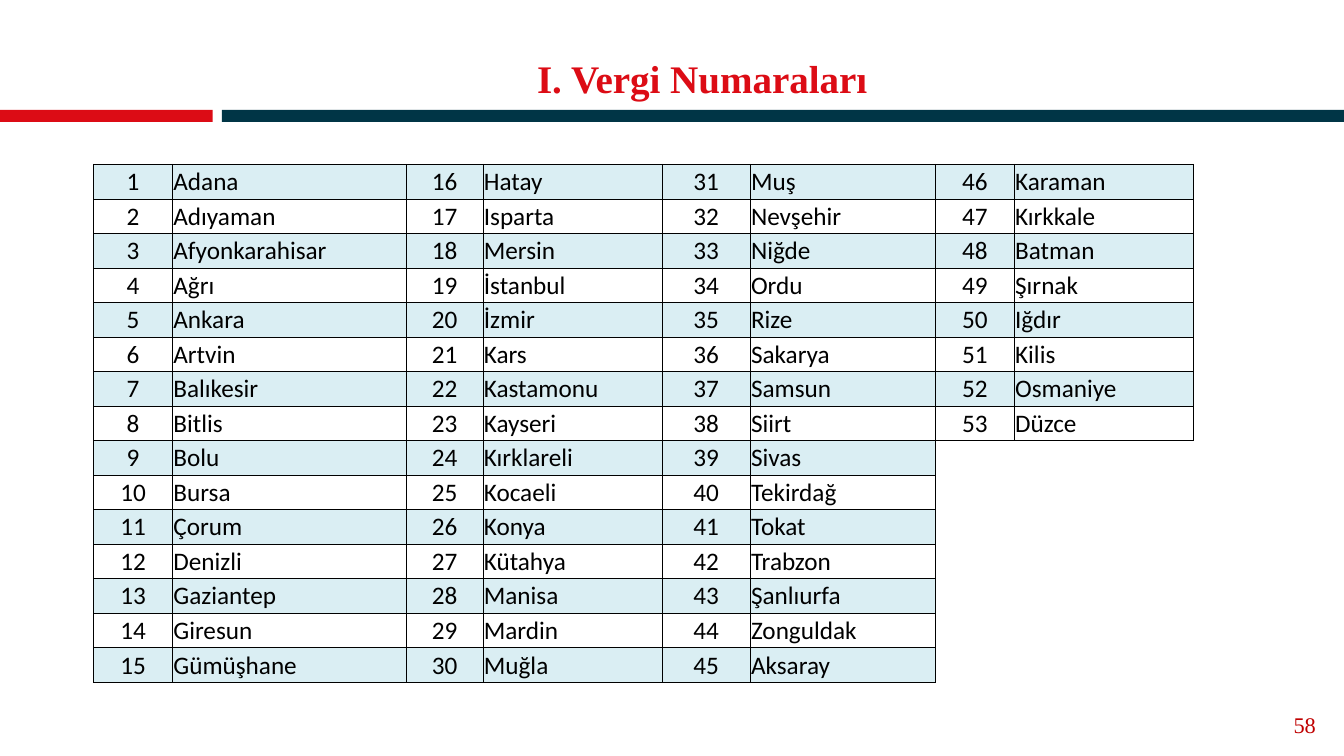
from lxml.etree import SubElement
from pptx import Presentation
from pptx.dml.color import RGBColor
from pptx.enum.shapes import MSO_SHAPE
from pptx.enum.text import MSO_ANCHOR, PP_ALIGN
from pptx.oxml.ns import qn
from pptx.util import Inches, Pt

# Content
TITLE = "I. Vergi Numaraları"
PAGE_NUMBER = "58"
PROVINCES = [
    "Adana", "Adıyaman", "Afyonkarahisar", "Ağrı", "Ankara",
    "Artvin", "Balıkesir", "Bitlis", "Bolu", "Bursa",
    "Çorum", "Denizli", "Gaziantep", "Giresun", "Gümüşhane",
    "Hatay", "Isparta", "Mersin", "İstanbul", "İzmir",
    "Kars", "Kastamonu", "Kayseri", "Kırklareli", "Kocaeli",
    "Konya", "Kütahya", "Manisa", "Mardin", "Muğla",
    "Muş", "Nevşehir", "Niğde", "Ordu", "Rize",
    "Sakarya", "Samsun", "Siirt", "Sivas", "Tekirdağ",
    "Tokat", "Trabzon", "Şanlıurfa", "Zonguldak", "Aksaray",
    "Karaman", "Kırkkale", "Batman", "Şırnak", "Iğdır",
    "Kilis", "Osmaniye", "Düzce",
]

# Layout, in inches
WIDTH, HEIGHT = 13.33, 7.5
BAR_TOP, BAR_HEIGHT = 1.09, 0.12
BARS = [(0, 2.11, "DC0C15"), (2.2, WIDTH - 2.2, "003546")]
TABLE_LEFT, TABLE_TOP, TABLE_HEIGHT = 0.93, 1.63, 5.14
COLUMN_WIDTHS = [0.78, 2.32, 0.76, 1.78, 0.87, 1.84, 0.78, 1.78]
ROWS = 15
BLACK, BAND = "000000", "DAEEF3"
PLAIN_TABLE_STYLE = "{2D5ABB26-0587-4C30-8999-92F81FD0307C}"


def color(hex_value):
    return RGBColor.from_string(hex_value)


def format_text(paragraph, font_name, size, hex_value, align, bold=False):
    paragraph.alignment = align
    for run in paragraph.runs:
        run.font.name = font_name
        run.font.size = Pt(size)
        run.font.bold = bold
        run.font.color.rgb = color(hex_value)


def add_label(slide, box, text, size, hex_value, align, bold=False):
    text_frame = slide.shapes.add_textbox(*map(Inches, box)).text_frame
    text_frame.word_wrap = True
    text_frame.vertical_anchor = MSO_ANCHOR.MIDDLE
    text_frame.text = text
    format_text(text_frame.paragraphs[0], "Times New Roman", size, hex_value, align, bold)


def add_borders(cell):
    properties = cell._tc.get_or_add_tcPr()
    for side in ("a:lnL", "a:lnR", "a:lnT", "a:lnB"):
        line = SubElement(properties, qn(side), w=str(Pt(0.5)))
        fill = SubElement(line, qn("a:solidFill"))
        SubElement(fill, qn("a:srgbClr"), val=BLACK)


def add_province_table(slide):
    frame = slide.shapes.add_table(
        ROWS, len(COLUMN_WIDTHS), Inches(TABLE_LEFT), Inches(TABLE_TOP),
        Inches(sum(COLUMN_WIDTHS)), Inches(TABLE_HEIGHT))
    table = frame.table
    table.first_row = table.horz_banding = False
    for style in frame.element.iter(qn("a:tableStyleId")):
        style.text = PLAIN_TABLE_STYLE
    for column, width in zip(table.columns, COLUMN_WIDTHS):
        column.width = Inches(width)

    for row in range(ROWS):
        for column in range(len(COLUMN_WIDTHS)):
            cell = table.cell(row, column)
            cell.margin_left = cell.margin_right = cell.margin_top = Inches(0.01)
            cell.margin_bottom = 0
            cell.vertical_anchor = MSO_ANCHOR.MIDDLE
            # Each pair of columns holds the next run of provinces
            pair, is_name = divmod(column, 2)
            index = pair * ROWS + row
            if index >= len(PROVINCES):
                cell.fill.background()
                continue
            cell.text = PROVINCES[index] if is_name else str(index + 1)
            format_text(cell.text_frame.paragraphs[0], "Calibri", 18, BLACK,
                        PP_ALIGN.LEFT if is_name else PP_ALIGN.CENTER)
            add_borders(cell)
            if row % 2 == 0:
                cell.fill.solid()
                cell.fill.fore_color.rgb = color(BAND)
            else:
                cell.fill.background()


def main():
    presentation = Presentation()
    presentation.slide_width = Inches(WIDTH)
    presentation.slide_height = Inches(HEIGHT)
    slide = presentation.slides.add_slide(presentation.slide_layouts[6])

    # Divider bars
    for left, width, hex_value in BARS:
        bar = slide.shapes.add_shape(
            MSO_SHAPE.RECTANGLE, Inches(left), Inches(BAR_TOP), Inches(width), Inches(BAR_HEIGHT))
        bar.shadow.inherit = False
        bar.fill.solid()
        bar.fill.fore_color.rgb = color(hex_value)
        bar.line.fill.background()

    # Page number, title and table
    add_label(slide, (12.25, 6.99, 0.9, 0.4), PAGE_NUMBER, 16, "C00000", PP_ALIGN.RIGHT)
    add_label(slide, (0.6, 0.37, WIDTH - 0.6, 0.8), TITLE, 27.9, "DC0C15", PP_ALIGN.CENTER, True)
    add_province_table(slide)

    presentation.save("out.pptx")


if __name__ == "__main__":
    main()
